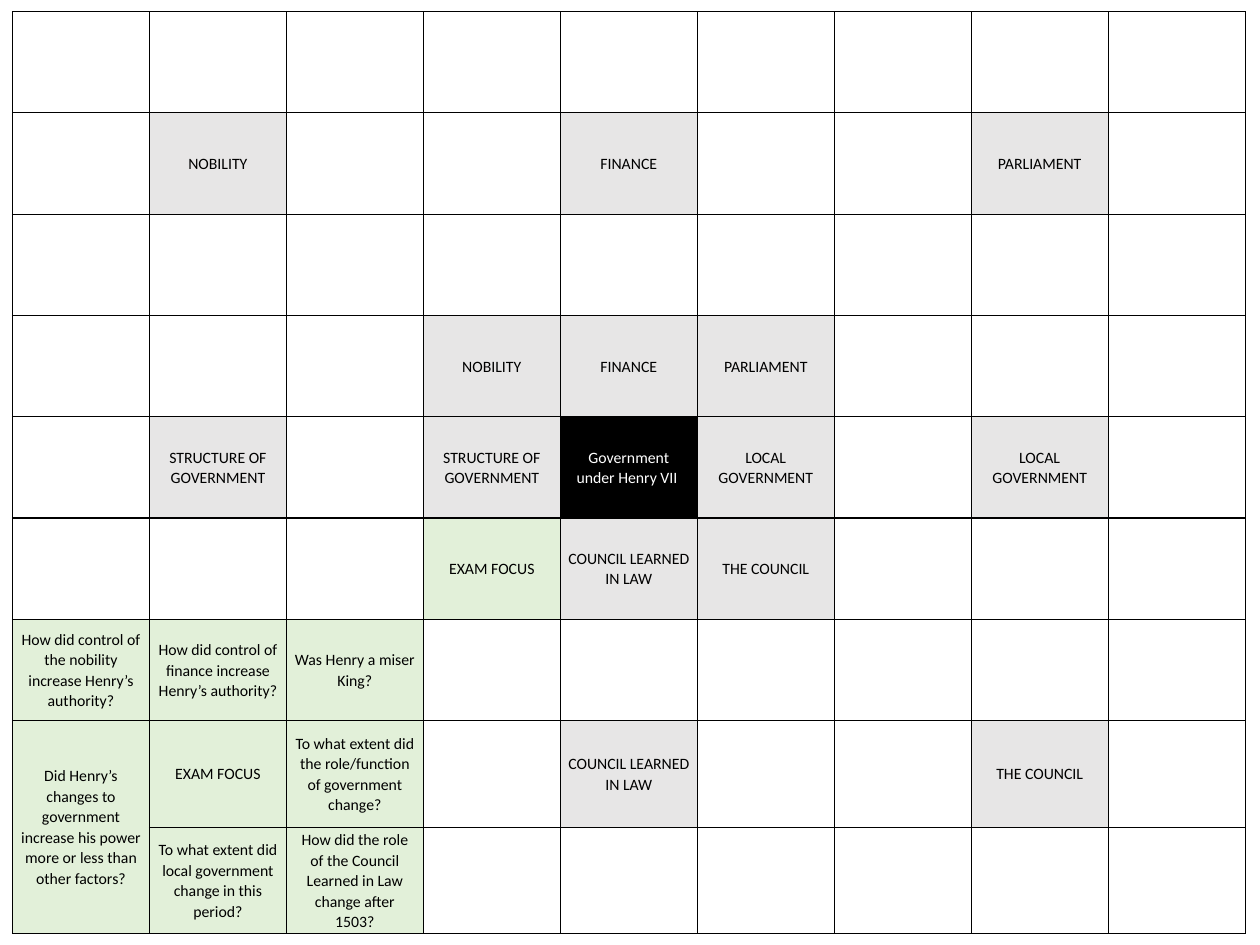
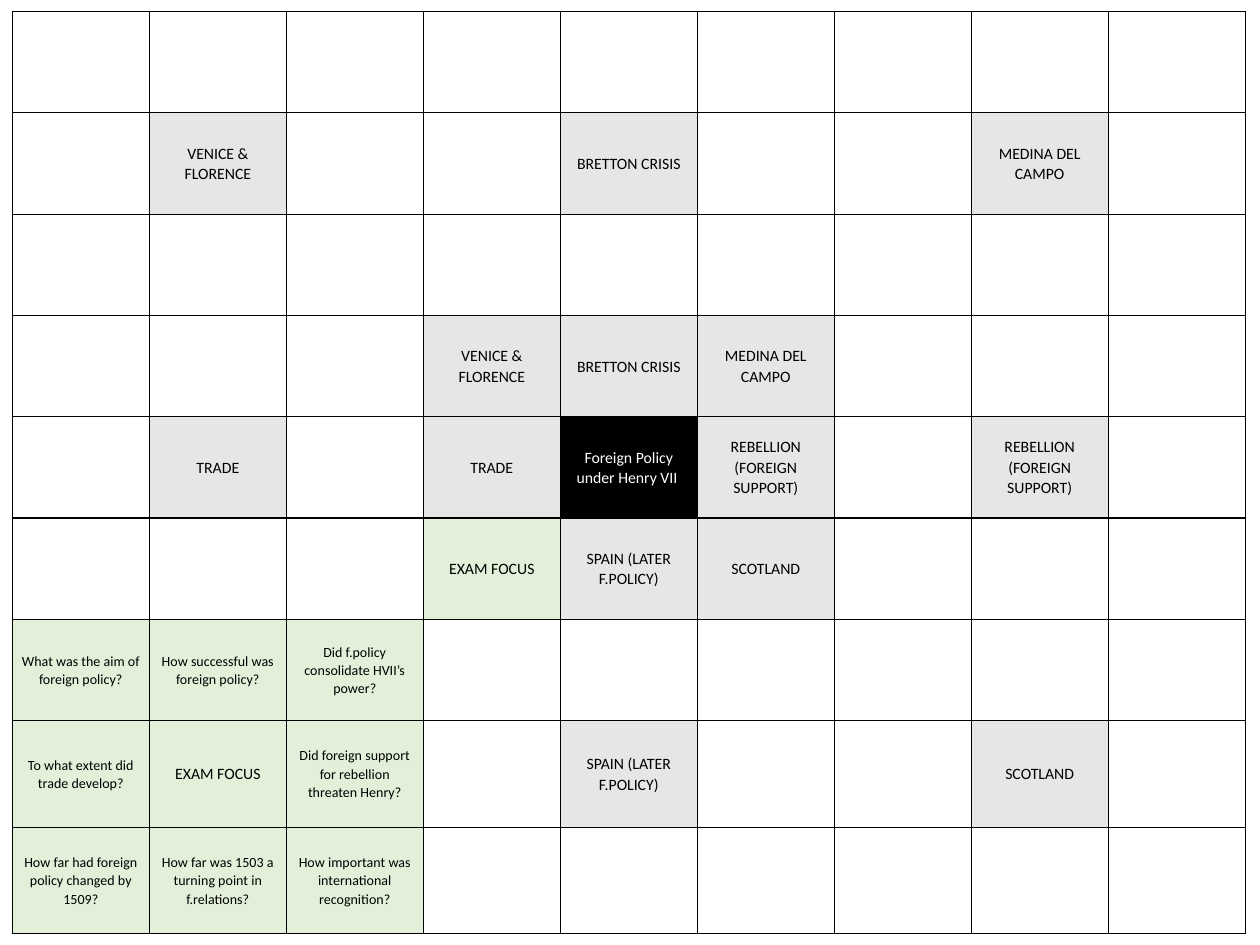
import lxml.etree
import pptx
import pptx.dml.color
import pptx.enum.text
import pptx.oxml.ns
import pptx.util

Pt = pptx.util.Pt

COLORS = {"empty": "FFFFFF", "topic": "E7E6E6", "exam": "E2F0D9",
          "theme": "000000", "dark": "000000", "light": "FFFFFF"}
FONT = "Calibri"
LABEL_SIZE = 9
GRID_LEFT, GRID_TOP = 7.1, 6.6
COLUMN_WIDTH = 78.27
ROW_HEIGHTS = [57.9] * 7 + [60.9] * 2
SIDE_MARGIN = 4.5
BORDER_WIDTH = 0.75
CENTRE = 4

# Row and column steps from a block's middle, read left to right and downwards
AROUND = [(-1, -1), (-1, 0), (-1, 1), (0, -1), (0, 1), (1, -1), (1, 0), (1, 1)]
EXAM_LABEL = "EXAM FOCUS"

# Topics and questions follow AROUND; a line break starts a new paragraph,
# and a question of None joins its cell to the one above.
GRIDS = [
    {
        "theme": "Government\nunder Henry VII ",
        "topics": ["NOBILITY", "FINANCE", "PARLIAMENT",
                   "STRUCTURE OF GOVERNMENT", "LOCAL GOVERNMENT",
                   EXAM_LABEL, "COUNCIL LEARNED IN LAW", "THE COUNCIL"],
        "questions": [
            "How did control of the nobility increase Henry’s authority?",
            "How did control of finance increase Henry’s authority?",
            "Was Henry a miser King?",
            "Did Henry’s changes to government increase his power more or less "
            "than other factors?",
            "To what extent did the role/function of government change?",
            None,
            "To what extent did local government change in this period?",
            "How did the role of the Council Learned in Law change after 1503?",
        ],
        "question_size": 9,
    },
    {
        "theme": "Foreign Policy under Henry VII ",
        "topics": ["VENICE & FLORENCE", "BRETTON CRISIS", "MEDINA DEL CAMPO",
                   "TRADE", "REBELLION\n(FOREIGN SUPPORT)",
                   EXAM_LABEL, "SPAIN (LATER F.POLICY)", "SCOTLAND"],
        "questions": [
            "What was the aim of foreign policy?",
            "How successful was foreign policy?",
            "Did f.policy consolidate HVII’s power?",
            "To what extent did trade develop?",
            "Did foreign support for rebellion threaten Henry?",
            "How far had foreign policy changed by 1509?",
            "How far was 1503 a turning point in f.relations?",
            "How important was international recognition?",
        ],
        "question_size": 8,
    },
]


def rgb(name):
    return pptx.dml.color.RGBColor.from_string(COLORS[name])


def fill_cell(cell, name):
    cell.fill.solid()
    cell.fill.fore_color.rgb = rgb(name)


def draw_borders(cell):
    """Put a thin dark line on all four sides; lines must precede the fill."""
    qn = pptx.oxml.ns.qn
    properties = cell._tc.get_or_add_tcPr()
    for position, side in enumerate(("a:lnL", "a:lnR", "a:lnT", "a:lnB")):
        line = lxml.etree.Element(qn(side), w=str(Pt(BORDER_WIDTH)))
        solid = lxml.etree.SubElement(line, qn("a:solidFill"))
        lxml.etree.SubElement(solid, qn("a:srgbClr"), val=COLORS["dark"])
        properties.insert(position, line)


def write_cell(cell, text, fill, size=LABEL_SIZE, color="dark"):
    fill_cell(cell, fill)
    cell.vertical_anchor = pptx.enum.text.MSO_ANCHOR.MIDDLE
    cell.margin_left = cell.margin_right = Pt(SIDE_MARGIN)
    cell.margin_top = cell.margin_bottom = Pt(0)
    frame = cell.text_frame
    for index, line in enumerate(text.split("\n")):
        para = frame.add_paragraph() if index else frame.paragraphs[0]
        para.alignment = pptx.enum.text.PP_ALIGN.CENTER
        para.line_spacing = 1.07
        span = para.add_run()
        span.text = line
        span.font.name = FONT
        span.font.size = Pt(size)
        span.font.color.rgb = rgb(color)


def add_empty_grid(page):
    count = len(ROW_HEIGHTS)
    table = page.shapes.add_table(
        count, count, Pt(GRID_LEFT), Pt(GRID_TOP),
        Pt(COLUMN_WIDTH * count), Pt(sum(ROW_HEIGHTS))).table
    table.first_row = table.horz_banding = False
    for column in table.columns:
        column.width = Pt(COLUMN_WIDTH)
    for row, height in zip(table.rows, ROW_HEIGHTS):
        row.height = Pt(height)
    for cell in table.iter_cells():
        fill_cell(cell, "empty")
        draw_borders(cell)
    return table


def write_topics(table, topics):
    """Write each topic beside the theme and in the middle of its own block."""
    for (down, right), topic in zip(AROUND, topics):
        fill = "exam" if topic == EXAM_LABEL else "topic"
        for distance in (1, 3):
            cell = table.cell(CENTRE + distance * down, CENTRE + distance * right)
            write_cell(cell, topic, fill)


def write_questions(table, questions, size):
    """Write the questions around the middle of the exam block."""
    exam_down, exam_right = AROUND[5]
    for (down, right), question in zip(AROUND, questions):
        row = CENTRE + 3 * exam_down + down
        column = CENTRE + 3 * exam_right + right
        cell = table.cell(row, column)
        if question is None:
            table.cell(row - 1, column).merge(cell)
        else:
            write_cell(cell, question, "exam", size)


def add_revision_page(deck, grid):
    page = deck.slides.add_slide(deck.slide_layouts[6])
    table = add_empty_grid(page)
    write_cell(table.cell(CENTRE, CENTRE), grid["theme"], "theme", color="light")
    write_topics(table, grid["topics"])
    write_questions(table, grid["questions"], grid["question_size"])


def main():
    deck = pptx.Presentation()
    deck.slide_width, deck.slide_height = Pt(720), Pt(540)
    for grid in GRIDS:
        add_revision_page(deck, grid)
    deck.save("out.pptx")


if __name__ == "__main__":
    main()
